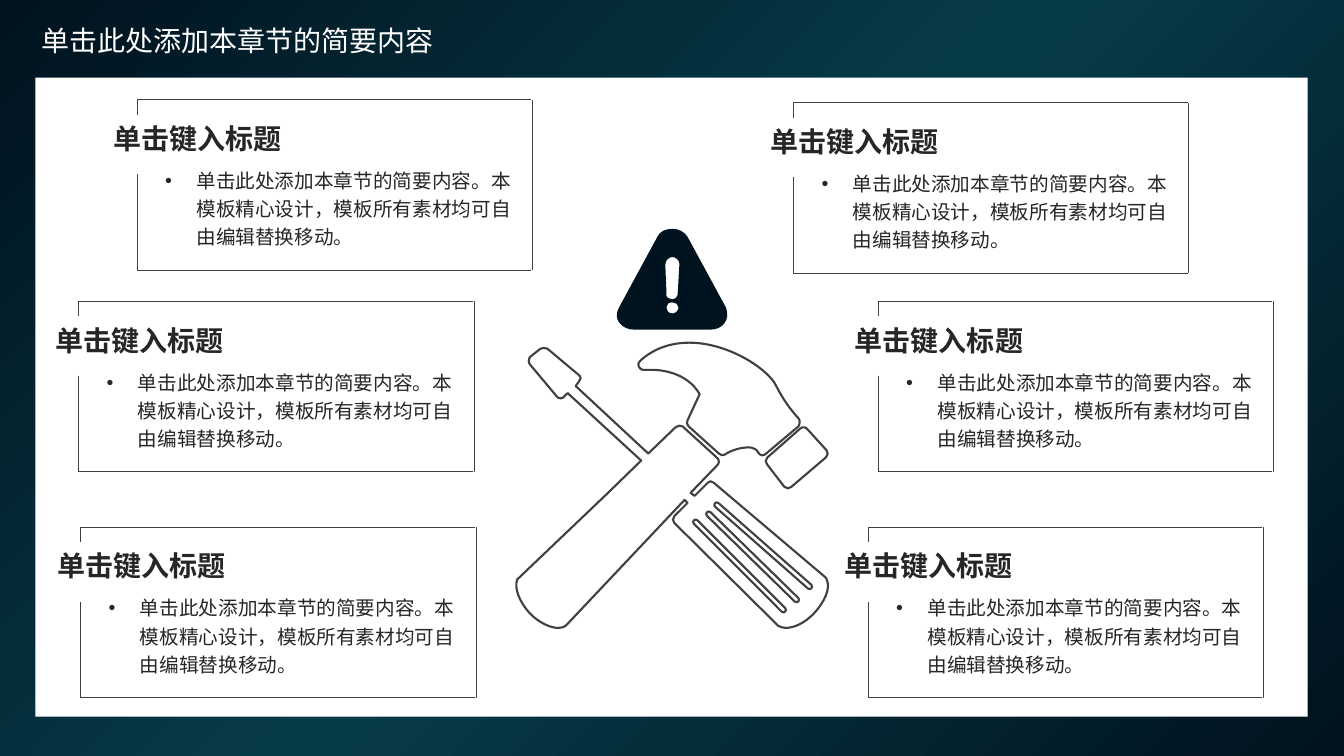
import copy
import math

import pptx
import pptx.dml.color
import pptx.enum.shapes
import pptx.enum.text
import pptx.oxml
import pptx.oxml.ns
import pptx.util

# ---- Content (100 px to the inch) ----
SCALE = 9144
FONT = "Noto Sans CJK SC"
DARK, TEAL, WHITE, LINE, INK = "01131F", "073B48", "FFFFFF", "404040", "262626"
GRADIENT = [(0, DARK), (0.5, TEAL), (1, DARK)]

HEADER = "单击此处添加本章节的简要内容"
CARD_TITLE = "单击键入标题"
CARD_BODY = "单击此处添加本章节的简要内容。本模板精心设计，模板所有素材均可自由编辑替换移动。"
CARD_CORNERS = [(136, 99), (78, 299), (80, 523), (787, 102), (871, 299), (861, 523)]

# Frame segments relative to a card's corner, open on the left beside the title
FRAME = [(0, 0, 0, 15), (0, 0, 391, 0), (0, 169, 391, 169),
         (0, 74, 0, 158), (0, 158, 0, 169), (392, 0, 392, 169)]

# Outlines: pairs are corners, sixes are Bézier curves
HAMMER_FACE = [(798, 424), (796, 424, 795, 424, 794, 425), (761, 454),
               (759, 456, 759, 459, 761, 461), (778, 483),
               (780, 485, 783, 485, 785, 483), (819, 454),
               (821, 452, 822, 449, 820, 447), (801, 426),
               (800, 425, 799, 424, 798, 424)]
CROSSED_HANDLES = [
    (543, 346), (541, 345, 538, 345, 536, 346), (526, 354),
    (524, 356, 524, 360, 526, 362), (552, 393),
    (554, 396, 558, 396, 560, 393), (563, 390), (636, 457), (601, 491), (514, 574),
    (514, 574, 513, 575, 513, 575), (510, 584, 515, 597, 526, 609),
    (535, 618, 546, 623, 554, 623), (557, 623, 559, 622, 561, 621),
    (562, 620), (679, 496), (682, 499), (669, 512),
    (667, 514, 667, 517, 669, 519), (771, 620), (771, 621, 772, 621, 772, 621),
    (774, 622, 777, 623, 779, 623), (788, 623, 798, 618, 807, 609),
    (818, 597, 824, 584, 820, 575), (819, 573), (708, 479),
    (706, 477, 703, 477, 702, 479), (689, 492), (685, 489), (712, 461),
    (713, 460, 714, 456, 711, 454), (677, 423),
    (675, 422, 672, 422, 670, 424), (643, 450), (571, 383), (574, 379),
    (576, 377, 577, 374, 574, 372)]
HAMMER_HEAD = [
    (684, 340), (665, 340, 648, 346, 635, 358),
    (631, 361, 634, 367, 638, 367), (645, 367), (645, 367, 646, 367, 647, 367),
    (655, 367, 681, 369, 694, 391), (682, 417), (681, 419, 681, 421, 683, 423),
    (713, 450), (715, 452, 717, 452, 719, 451),
    (719, 451, 727, 445, 740, 444), (749, 443, 752, 448, 752, 449),
    (754, 452, 757, 453, 760, 450), (792, 423),
    (793, 422, 794, 417, 792, 415), (792, 415, 780, 403, 770, 383),
    (762, 366, 722, 340, 684, 340)]
SLOTS = [(690, 518, 777, 605), (703, 510, 790, 595), (711, 501, 803, 582)]
SLOT_RADIUS = 2.5

WARNING = [
    [(720, 305), (682, 235), (679, 230, 673, 227, 667, 227),
     (660, 227, 654, 230, 652, 235), (614, 305), (611, 310, 611, 316, 614, 320),
     (618, 325, 623, 327, 629, 327), (705, 327), (710, 327, 716, 325, 719, 320),
     (722, 316, 722, 310, 720, 305)],
    [(667, 311), (663, 311, 661, 308, 661, 305), (661, 302, 663, 300, 667, 300),
     (670, 300, 673, 302, 673, 305), (673, 308, 670, 311, 667, 311)],
    [(672, 293), (672, 295, 669, 297, 667, 297), (664, 297, 661, 295, 661, 293),
     (661, 282, 660, 272, 660, 262), (660, 258, 664, 255, 667, 255),
     (670, 255, 674, 258, 674, 262), (673, 272, 673, 282, 672, 293)]]

presentation = pptx.Presentation()
presentation.slide_width, presentation.slide_height = 1333 * SCALE, 750 * SCALE
slide = presentation.slides.add_slide(presentation.slide_layouts[6])


def colour(hex_string):
    return pptx.dml.color.RGBColor.from_string(hex_string)


def drawing(markup):
    return pptx.oxml.parse_xml(f'<a:{markup} {pptx.oxml.ns.nsdecls("a")}/>')


def paint(shape, fill=None, line=None, width=1):
    shape.shadow.inherit = False
    if fill:
        shape.fill.solid()
        shape.fill.fore_color.rgb = colour(fill)
    else:
        shape.fill.background()
    if line:
        shape.line.color.rgb = colour(line)
        shape.line.width = pptx.util.Pt(width)
    else:
        shape.line.fill.background()


def slot_outline(x1, y1, x2, y2):
    """A thin bar with one curve around each end."""
    length = math.hypot(x2 - x1, y2 - y1)
    along_x, along_y = (SLOT_RADIUS * (x2 - x1) / length, SLOT_RADIUS * (y2 - y1) / length)

    def cap(x, y, sign):
        dx, dy = sign * along_x, sign * along_y
        start, end = (x + dy, y - dx), (x - dy, y + dx)
        bulge_x, bulge_y = dx * 4 / 3, dy * 4 / 3
        return [start, (start[0] + bulge_x, start[1] + bulge_y,
                        end[0] + bulge_x, end[1] + bulge_y, *end)]

    return cap(x2, y2, 1) + cap(x1, y1, -1)


def add_outlines(outlines, **style):
    """Join the end points, then bend the segments that are curves."""
    ends = [[(part[-2] * SCALE, part[-1] * SCALE) for part in outline]
            for outline in outlines]
    builder = slide.shapes.build_freeform(*ends[0][0], scale=1.0)
    builder.add_line_segments(ends[0][1:], close=True)
    for points in ends[1:]:
        builder.move_to(*points[0])
        builder.add_line_segments(points[1:], close=True)
    shape = builder.convert_to_shape()
    segments = list(shape._element.iter(pptx.oxml.ns.qn("a:lnTo")))
    parts = [part for outline in outlines for part in outline[1:]]
    for segment, part in zip(segments, parts):
        if len(part) == 6:
            curve = drawing("cubicBezTo")
            for x, y in zip(part[0::2], part[1::2]):
                curve.append(drawing(f'pt x="{round(x * SCALE) - shape.left}" '
                                     f'y="{round(y * SCALE) - shape.top}"'))
            segment.getparent().replace(segment, curve)
    paint(shape, **style)


def add_text(text, left, top, width, height, size, ink=INK, bold=False, middle=False,
             spacing=1.2, bullet=False):
    box = slide.shapes.add_textbox(*(value * SCALE for value in (left, top, width, height)))
    frame = box.text_frame
    frame.word_wrap = True
    if middle:
        frame.vertical_anchor = pptx.enum.text.MSO_ANCHOR.MIDDLE
    paragraph = frame.paragraphs[0]
    paragraph.line_spacing = spacing
    run = paragraph.add_run()
    run.text = text
    run.font.color.rgb = colour(ink)
    for name, value in {"name": FONT, "size": pptx.util.Pt(size), "bold": bold}.items():
        setattr(run.font, name, value)
    run.font._element.append(drawing(f'ea typeface="{FONT}"'))
    if bullet:
        properties = paragraph._p.get_or_add_pPr()
        properties.set("marL", str(31 * SCALE))
        properties.set("indent", str(-31 * SCALE))
        for markup in ('buFont typeface="Arial"', 'buChar char="•"'):
            properties.append(drawing(markup))


# ---- Background, panel and header ----
background = slide.background.fill
background.gradient()
background.gradient_angle = 315
stop_list = next(slide._element.iter(pptx.oxml.ns.qn("a:gsLst")))
stop_list.append(copy.deepcopy(stop_list[0]))
for stop, (position, shade) in zip(background.gradient_stops, GRADIENT):
    stop.position = position
    stop.color.rgb = colour(shade)

panel = slide.shapes.add_shape(pptx.enum.shapes.MSO_SHAPE.RECTANGLE,
                               *(value * SCALE for value in (35, 77, 1262, 634)))
paint(panel, fill=WHITE)
add_text(HEADER, 31, 20, 444, 44, 20, ink=WHITE, middle=True, spacing=0.9)

# ---- Crossed tools ----
add_outlines([slot_outline(*slot) for slot in SLOTS]
             + [HAMMER_FACE, CROSSED_HANDLES, HAMMER_HEAD], line=LINE, width=1.5)

# ---- Cards ----
for left, top in CARD_CORNERS:
    card_frame = slide.shapes.add_group_shape()
    for x1, y1, x2, y2 in FRAME:
        edge = card_frame.shapes.add_connector(
            pptx.enum.shapes.MSO_CONNECTOR.STRAIGHT,
            *(value * SCALE for value in (left + x1, top + y1, left + x2, top + y2)))
        edge.line.color.rgb = colour(LINE)
        edge.line.width = pptx.util.Pt(0.5)
        edge._element.spPr.append(drawing("effectLst"))
    add_text(CARD_TITLE, left - 33, top + 10, 260, 50, 20, bold=True)
    add_text(CARD_BODY, left + 18, top + 59, 374, 95, 14, bullet=True)

# ---- Warning sign ----
add_outlines(WARNING, fill=DARK)

presentation.save("out.pptx")
